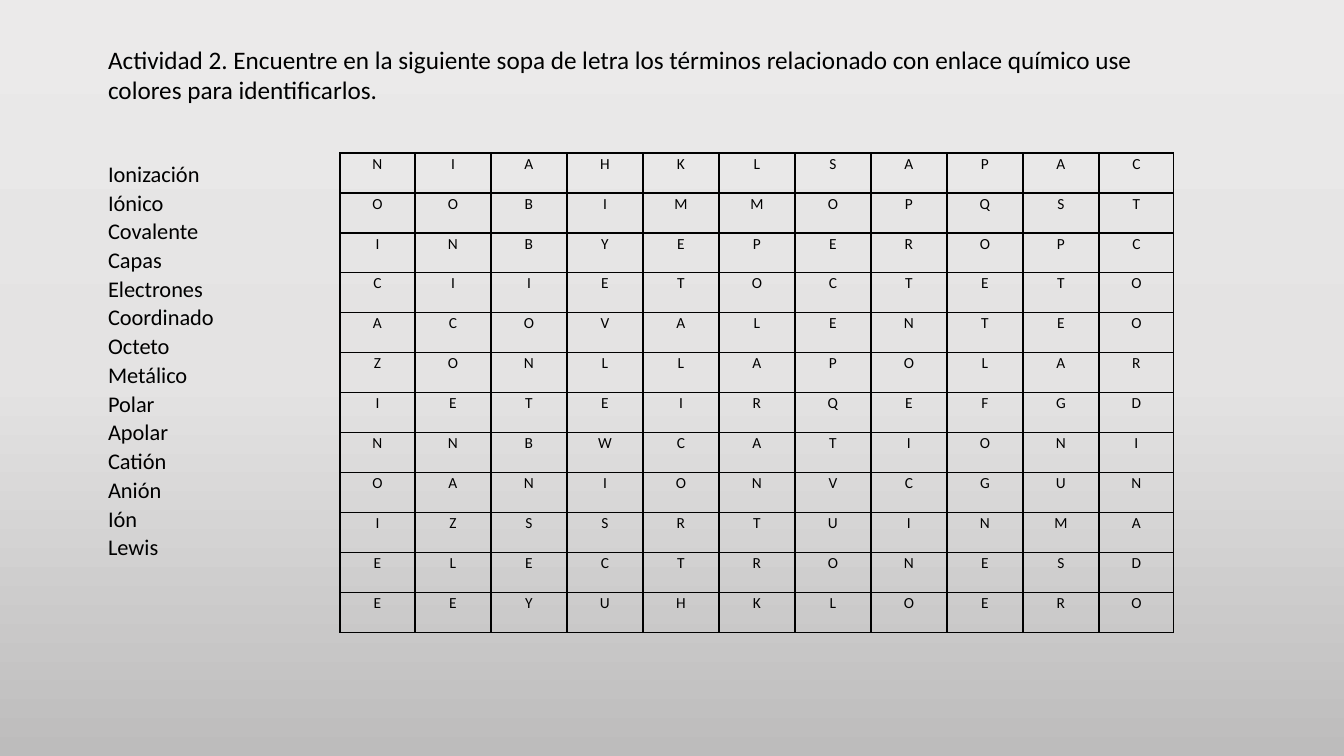
from copy import deepcopy
from lxml import etree
from pptx import Presentation, util as u
from pptx.dml.color import RGBColor
from pptx.enum import text as t
from pptx.oxml.ns import qn

SCALE = 914400 / 100.8
INK = "000000"
FONT = "Calibri"
TASK = ("Actividad 2. Encuentre en la siguiente sopa de letra los términos "
        "relacionado con enlace químico use colores para identificarlos.")
WORDS = ["Ionización", "Iónico", "Covalente", "Capas", "Electrones",
         "Coordinado", "Octeto", "Metálico", "Polar", "Apolar", "Catión",
         "Anión", "Ión", "Lewis"]
GRID = ["NIAHKLSAPAC", "OOBIMMOPQST", "INBYEPEROPC", "CIIETOCTETO",
        "ACOVALENTEO", "ZONLLAPOLAR", "IETEIRQEFGD", "NNBWCATIONI",
        "OANIONVCGUN", "IZSSRTUINMA", "ELECTRONESD", "EEYUHKLOERO"]


def px(n):
    return u.Emu(round(n * SCALE))


def rgb(code):
    return RGBColor.from_string(code)


def put(item, form):
    for name, value in form.items():
        setattr(item, name, value)


def style(para, size, form):
    put(para, form)
    put(para.font, {"name": FONT, "size": u.Pt(size), "bold": False})
    para.font.color.rgb = rgb(INK)


def place(shape, box):
    put(shape, dict(zip(("left", "top", "width", "height"), map(px, box))))
    put(shape.text_frame, {"word_wrap": True,
                           "vertical_anchor": t.MSO_ANCHOR.TOP,
                           "auto_size": t.MSO_AUTO_SIZE.SHAPE_TO_FIT_TEXT})


# Background
def shade(slide, codes):
    fill = slide.background.fill
    fill.gradient()
    fill.gradient_angle = 270
    stops = fill.gradient_stops
    first = stops[0]._gs
    first.addnext(deepcopy(first))
    for i, (stop, code) in enumerate(zip(fill.gradient_stops, codes)):
        stop.position = i / (len(codes) - 1)
        stop.color.rgb = rgb(code)


# Instruction
def head(slide, box):
    title = slide.shapes.title
    place(title, box)
    title.text_frame.text = TASK
    style(title.text_frame.paragraphs[0], 18,
          {"alignment": t.PP_ALIGN.LEFT, "line_spacing": 1.0})


# Words to find
def words(slide, box):
    body = slide.placeholders[1]
    place(body, box)
    body.text_frame.text = "\n".join(WORDS)
    for para in body.text_frame.paragraphs:
        style(para, 16, {"alignment": t.PP_ALIGN.LEFT, "line_spacing": 1.07,
                         "space_before": u.Pt(0), "space_after": u.Pt(0)})
        props = para._p.get_or_add_pPr()
        props.set("marL", "0")
        props.set("indent", "0")
        etree.SubElement(props, qn("a:buNone"))


def edge(cell):
    props = cell._tc.get_or_add_tcPr()
    for side in ("lnL", "lnR", "lnT", "lnB"):
        line = etree.SubElement(props, qn("a:" + side), w=str(u.Pt(1)))
        fill = etree.SubElement(line, qn("a:solidFill"))
        etree.SubElement(fill, qn("a:srgbClr"), val=INK)


# Letter grid, with slightly narrower outer columns
def puzzle(slide, box):
    rows, cols = len(GRID), len(GRID[0])
    table = slide.shapes.add_table(rows, cols, *map(px, box)).table
    put(table, {"first_row": False, "horz_banding": False})
    inner = round(box[2] / cols)
    outer = (box[2] - inner * (cols - 2)) // 2
    for i, col in enumerate(table.columns):
        col.width = px(outer if i in (0, cols - 1) else inner)
    for row, line in zip(table.rows, GRID):
        row.height = px(box[3] // rows)
        for cell, letter in zip(row.cells, line):
            cell.text = letter
            put(cell, {"margin_left": px(7), "margin_right": px(7),
                       "margin_top": 0, "margin_bottom": 0,
                       "vertical_anchor": t.MSO_ANCHOR.TOP})
            style(cell.text_frame.paragraphs[0], 11,
                  {"alignment": t.PP_ALIGN.CENTER, "line_spacing": 1.07})
            edge(cell)
            cell.fill.background()


def main():
    deck = Presentation()
    put(deck, {"slide_width": px(1344), "slide_height": px(756)})
    slide = deck.slides.add_slide(deck.slide_layouts[1])
    shade(slide, ["EBEAEA", "E4E3E3", "BDBCBC"])
    head(slide, (98, 39, 1102, 72))
    words(slide, (98, 153, 137, 415))
    puzzle(slide, (340, 153, 834, 480))
    deck.save("out.pptx")


if __name__ == "__main__":
    main()
